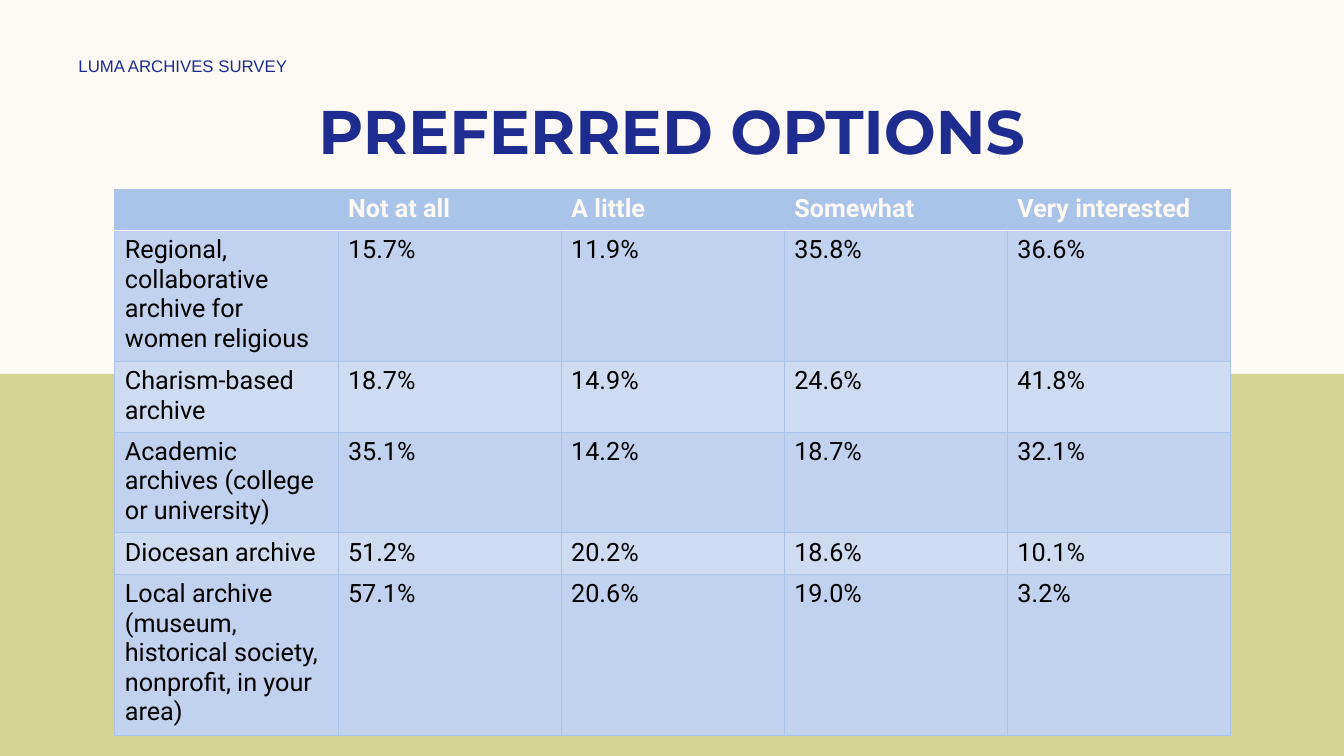
from lxml.etree import SubElement as Sub
from pptx import Presentation
from pptx.dml.color import RGBColor as RGB
from pptx.enum.shapes import MSO_SHAPE as Shape
from pptx.enum.text import MSO_ANCHOR as Anchor, PP_ALIGN as Align
from pptx.oxml.ns import qn
from pptx.util import Pt

CREAM, GREEN, NAVY, BLACK = "FDFAF6", "D2D592", "1F2C8F", "000000"
BLUE, DARK, LIGHT = "AAC3E8", "C1D2EE", "CEDCF2"

HEADS = ["", "Not at all", "A little", "Somewhat", "Very interested"]
# Each row: height, label, shares
ROWS = [
    (92, "Regional, collaborative archive for women religious",
     "15.7%", "11.9%", "35.8%", "36.6%"),
    (49.5, "Charism-based archive", "18.7%", "14.9%", "24.6%", "41.8%"),
    (70.5, "Academic archives (college or university)",
     "35.1%", "14.2%", "18.7%", "32.1%"),
    (29.5, "Diocesan archive", "51.2%", "20.2%", "18.6%", "10.1%"),
    (113, "Local archive (museum, historical society, nonprofit, in your area)",
     "57.1%", "20.6%", "19.0%", "3.2%"),
]


def paint(fill, color):
    fill.solid()
    fill.fore_color.rgb = RGB.from_string(color)


def style(par, name, size, color, bold=False):
    font = par.font
    font.name, font.size, font.bold = name, Pt(size), bold
    font.color.rgb = RGB.from_string(color)


def add_band(slide, left, top, width, height, color):
    band = slide.shapes.add_shape(
        Shape.RECTANGLE, Pt(left), Pt(top), Pt(width), Pt(height))
    band.shadow.inherit = False
    paint(band.fill, color)
    band.line.fill.background()


def add_text(slide, text, left, top, width, height, name, size,
             bold=False, align=Align.LEFT):
    box = slide.shapes.add_textbox(Pt(left), Pt(top), Pt(width), Pt(height))
    frame = box.text_frame
    frame.word_wrap = True
    frame.vertical_anchor = Anchor.MIDDLE
    par = frame.paragraphs[0]
    par.text, par.alignment = text, align
    style(par, name, size, NAVY, bold)


def add_edge(cell, side, color, width):
    line = Sub(cell._tc.get_or_add_tcPr(), qn("a:ln" + side), w=str(Pt(width)))
    Sub(Sub(line, qn("a:solidFill")), qn("a:srgbClr"), val=color)


def fill_cell(cell, text, row):
    # Edges go in before the fill; a cream rule lies under the heads
    rule = {0: "B", 1: "T"}.get(row)
    for side in "LRTB":
        add_edge(cell, side, *((CREAM, 1) if side == rule else (BLUE, 0.5)))
    head = row == 0
    paint(cell.fill, BLUE if head else DARK if row % 2 else LIGHT)
    par = cell.text_frame.paragraphs[0]
    par.text = text
    style(par, "Roboto", 18, CREAM if head else BLACK, head)


def add_grid(slide, left, top, width, rows):
    high = sum(row[0] for row in rows)
    grid = slide.shapes.add_table(
        len(rows), len(HEADS), Pt(left), Pt(top), Pt(width), Pt(high)).table
    grid.horz_banding = False
    for col in grid.columns:
        col.width = Pt(width / len(HEADS))
    for r, (height, *texts) in enumerate(rows):
        grid.rows[r].height = Pt(height)
        for c, text in enumerate(texts):
            fill_cell(grid.cell(r, c), text, r)


def main():
    deck = Presentation()
    deck.slide_width, deck.slide_height = Pt(960), Pt(540)
    slide = deck.slides.add_slide(deck.slide_layouts[6])

    # Backdrop
    paint(slide.background.fill, CREAM)
    add_band(slide, -2, 267, 962, 273, GREEN)

    # Title and label
    add_text(slide, "PREFERRED OPTIONS", 60, 62.5, 840, 60.5,
             "Montserrat", 44, True, Align.CENTER)
    add_text(slide, "LUMA ARCHIVES SURVEY", 49, 36, 252, 21.5, "Arial", 12)

    # Survey table
    add_grid(slide, 82, 135, 797, [(29.5, *HEADS)] + ROWS)

    deck.save("out.pptx")


if __name__ == "__main__":
    main()
